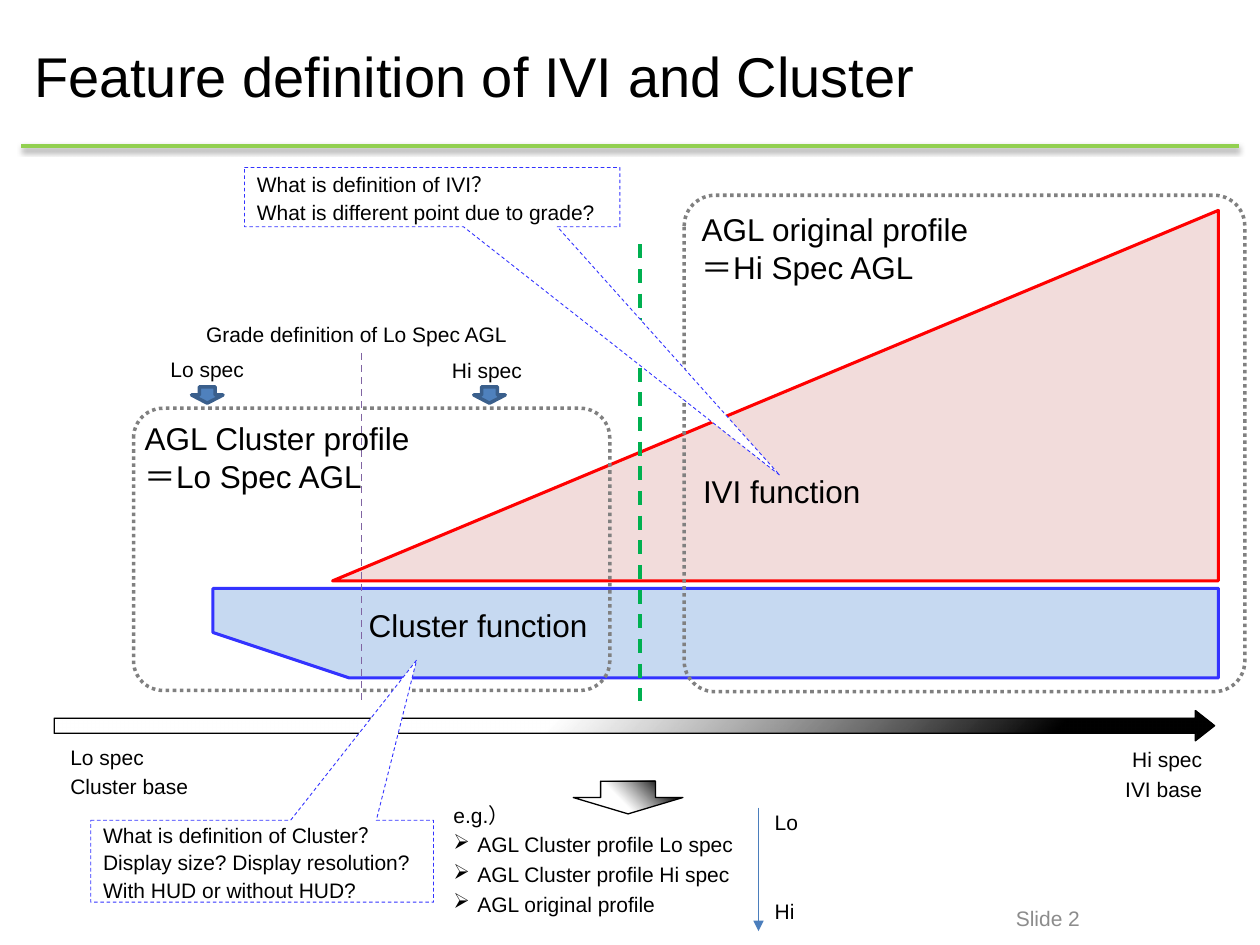
from dataclasses import dataclass
from typing import Optional

from lxml.etree import SubElement
from pptx import Presentation
from pptx.dml.color import RGBColor
from pptx.enum.dml import MSO_LINE
from pptx.enum.shapes import MSO_CONNECTOR, MSO_SHAPE
from pptx.enum.text import MSO_ANCHOR, PP_ALIGN
from pptx.oxml.ns import qn
from pptx.util import Inches, Pt

COLS, ROWS = 100, 75
WIDE, HIGH = Inches(10), Inches(7.5)
Box = tuple[float, float, float, float]  # column, row, columns, rows
Spot = tuple[float, float]
LEFT, MID, RIGHT = PP_ALIGN.LEFT, PP_ALIGN.CENTER, PP_ALIGN.RIGHT


@dataclass(frozen=True)
class Theme:
    font: str = "Arial"
    title: int = 32
    head: int = 18
    body: int = 12
    ink: str = "000000"
    paper: str = "FFFFFF"
    mute: str = "8C8C8C"
    rule: str = "92D050"
    split: str = "00B050"
    grade: str = "8064A2"
    frame: str = "808080"
    blue: str = "3333FF"
    sky: str = "C6D9F1"
    red: str = "FF0000"
    rose: str = "F2DCDB"
    mark: str = "4F81BD"
    edge: str = "3A5F8C"
    scale: str = "4B7EBC"


T = Theme()


@dataclass(frozen=True)
class Pen:
    hue: str
    width: float
    dash: Optional[MSO_LINE] = None


@dataclass(frozen=True)
class Line:
    text: str
    bullet: str = ""
    before: float = 0


@dataclass(frozen=True)
class Label:
    box: Box
    lines: tuple[Line, ...]
    size: int = T.body
    align: PP_ALIGN = LEFT
    pitch: Optional[int] = 17
    hue: str = T.ink
    anchor: MSO_ANCHOR = MSO_ANCHOR.TOP


@dataclass(frozen=True)
class Form:
    kind: MSO_SHAPE
    box: Box
    pen: Pen
    fill: Optional[str] = None
    adj: tuple[float, ...] = ()
    flip: str = ""
    fade: bool = False


@dataclass(frozen=True)
class Stroke:
    start: Spot
    end: Spot
    pen: Pen
    arrow: bool = False
    shade: bool = False


def rows(*texts: str) -> tuple[Line, ...]:
    return tuple(Line(text) for text in texts)


def place(col: float, row: float) -> tuple[int, int]:
    return round(WIDE * col / COLS), round(HIGH * row / ROWS)


def span(box: Box) -> tuple[int, int, int, int]:
    return place(*box[:2]) + place(*box[2:])


def ink(line, pen: Pen) -> None:
    line.color.rgb = RGBColor.from_string(pen.hue)
    line.width = Pt(pen.width)
    if pen.dash:
        line.dash_style = pen.dash


def paint(shape, fill: Optional[str], pen: Pen) -> None:
    shape.shadow.inherit = False
    if fill:
        shape.fill.solid()
        shape.fill.fore_color.rgb = RGBColor.from_string(fill)
    else:
        shape.fill.background()
    ink(shape.line, pen)


def blend(fill) -> None:
    """Fade from translucent paper to ink, towards the upper right."""
    fill.gradient()
    fill.gradient_angle = 45
    for stop, at, hue in zip(fill.gradient_stops, (0.43, 0.86), (T.paper, T.ink)):
        stop.position = at
        stop.color.rgb = RGBColor.from_string(hue)
    first = fill._xPr.find(".//" + qn("a:srgbClr"))
    SubElement(first, qn("a:alpha"), val="79000")


def write(frame, label: Label) -> None:
    frame.word_wrap = True
    frame.vertical_anchor = label.anchor
    for i, line in enumerate(label.lines):
        para = frame.paragraphs[0] if i == 0 else frame.add_paragraph()
        para.alignment = label.align
        if label.pitch:
            para.line_spacing = Pt(label.pitch)
        if line.before:
            para.space_before = Pt(line.before)
        if line.bullet:
            props = para._p.get_or_add_pPr()
            props.set("marL", str(Inches(0.19)))
            props.set("indent", str(-Inches(0.19)))
            SubElement(props, qn("a:buChar"), char=line.bullet)
        run = para.add_run()
        run.text = line.text
        run.font.name = T.font
        run.font.size = Pt(label.size)
        run.font.color.rgb = RGBColor.from_string(label.hue)


def note(slide, label: Label) -> None:
    write(slide.shapes.add_textbox(*span(label.box)).text_frame, label)


def draw(slide, form: Form):
    shape = slide.shapes.add_shape(form.kind, *span(form.box))
    for i, value in enumerate(form.adj):
        shape.adjustments[i] = value
    paint(shape, form.fill, form.pen)
    if form.fade:
        blend(shape.fill)
    if form.flip:
        shape._element.spPr.find(qn("a:xfrm")).set(form.flip, "1")
    return shape


def rule(slide, stroke: Stroke) -> None:
    link = slide.shapes.add_connector(
        MSO_CONNECTOR.STRAIGHT, *place(*stroke.start), *place(*stroke.end))
    ink(link.line, stroke.pen)
    if stroke.arrow:
        SubElement(link.line._ln, qn("a:tailEnd"), type="triangle")
    effects = SubElement(link._element.spPr, qn("a:effectLst"))
    if stroke.shade:
        cast = SubElement(effects, qn("a:outerShdw"), blurRad=str(Pt(3.1)),
                          dist=str(Pt(1.6)), dir="5400000", rotWithShape="0")
        hue = SubElement(cast, qn("a:srgbClr"), val=T.ink)
        SubElement(hue, qn("a:alpha"), val="38000")


def band(slide, spots: list[Spot], fill: str, pen: Pen) -> None:
    first, *rest = [place(*spot) for spot in spots]
    path = slide.shapes.build_freeform(*first)
    path.add_line_segments(rest, close=True)
    paint(path.convert_to_shape(), fill, pen)


DOTS = Pen(T.frame, 2, MSO_LINE.ROUND_DOT)
THIN = Pen(T.ink, 0.75)
HINT = Pen(T.blue, 0.5, MSO_LINE.DASH)
STROKES = (
    Stroke((1.7, 11.6), (98.3, 11.6), Pen(T.rule, 2), shade=True),
    Stroke((28.7, 28), (28.7, 55.6), Pen(T.grade, 1, MSO_LINE.DASH)),
    Stroke((50.8, 19.4), (50.8, 55.6), Pen(T.split, 2, MSO_LINE.DASH)),
    Stroke((60.2, 64.1), (60.2, 73.9), Pen(T.scale, 0.75), arrow=True),
)
FORMS = (
    Form(MSO_SHAPE.RIGHT_ARROW, (4.3, 56.4, 92.1, 2.4), THIN,
         adj=(0.5, 0.637), flip="flipV", fade=True),
    *(Form(MSO_SHAPE.DOWN_ARROW, (col, 30.7, 2.5, 1.3), Pen(T.edge, 2), T.mark)
      for col in (15.2, 37.6)),
    Form(MSO_SHAPE.DOWN_ARROW, (45.5, 62, 8.7, 2.6), THIN, fade=True),
    Form(MSO_SHAPE.ROUNDED_RECTANGLE, (10.6, 32.4, 37.8, 22.4), DOTS, adj=(0.105,)),
    Form(MSO_SHAPE.ROUNDED_RECTANGLE, (54.3, 15.5, 44.5, 39.4), DOTS, adj=(0.062,)),
)
LABELS = (
    Label((71.7, 71.2, 15, 3.3), rows("Slide 2"), align=RIGHT, pitch=None,
          hue=T.mute, anchor=MSO_ANCHOR.MIDDLE),
    Label((4.6, 58.2, 13.8, 5.1), rows("Lo spec", "Cluster base")),
    Label((85, 58.4, 11.4, 5.1), rows("Hi spec", "IVI base"), align=RIGHT),
    Label((11.3, 27.4, 10.3, 3.2), rows("Lo spec"), align=MID),
    Label((33.5, 27.5, 10.3, 3.2), rows("Hi spec"), align=MID),
    Label((15.2, 24.7, 26.2, 3.2), rows("Grade definition of Lo Spec AGL"), align=MID),
    Label((35, 62.8, 29.1, 11.1), (Line("e.g.）"), *(
        Line("AGL " + name, "➢") for name in
        ("Cluster profile Lo spec", "Cluster profile Hi spec", "original profile")))),
    Label((60.5, 63.4, 4.5, 11.1), (Line("Lo"), Line("Hi", before=34))),
    *(Label(box, rows(*texts), T.head, align, None) for box, texts, align in (
        ((54.7, 16.2, 27.3, 7.1), ("AGL original profile", "＝Hi Spec AGL"), LEFT),
        ((10.5, 32.8, 24.5, 7.1), ("AGL Cluster profile", "＝Lo Spec AGL"), LEFT),
        ((48.4, 37, 27.3, 4), ("IVI function",), MID),
        ((24.3, 47.6, 27.3, 4), ("Cluster function",), MID))),
)
HINTS = (
    ((19.4, 13.3, 29.8, 4.7), (0.926, 4.697),
     ("What is definition of IVI？", "What is different point due to grade?")),
    ((7.2, 65.1, 27.2, 6.5), (0.451, -2.456),
     ("What is definition of Cluster？", "Display size? Display resolution?",
      "With HUD or without HUD?")),
)


def main() -> None:
    deck = Presentation()
    deck.slide_width, deck.slide_height = WIDE, HIGH
    slide = deck.slides.add_slide(deck.slide_layouts[5])
    title = slide.shapes.title
    box = (1.7, 1.7, 96.7, 8.5)
    title.left, title.top, title.width, title.height = span(box)
    write(title.text_frame, Label(box, rows("Feature definition of IVI and Cluster"),
                                  T.title, pitch=None, anchor=MSO_ANCHOR.MIDDLE))
    band(slide, [(96.7, 53.8), (27.7, 53.8), (16.9, 50.2), (16.9, 46.7), (96.7, 46.7)],
         T.sky, Pen(T.blue, 1.75))
    draw(slide, Form(MSO_SHAPE.RIGHT_TRIANGLE, (26.4, 16.7, 70.3, 29.4),
                     Pen(T.red, 1.75), T.rose, flip="flipH"))
    for stroke in STROKES:
        rule(slide, stroke)
    for form in FORMS:
        draw(slide, form)
    for label in LABELS:
        note(slide, label)
    for box, tip, texts in HINTS:
        shape = draw(slide, Form(MSO_SHAPE.RECTANGULAR_CALLOUT, box, HINT, T.paper, tip))
        write(shape.text_frame, Label(box, rows(*texts), pitch=16,
                                      anchor=MSO_ANCHOR.MIDDLE))
    deck.save("out.pptx")


if __name__ == "__main__":
    main()
